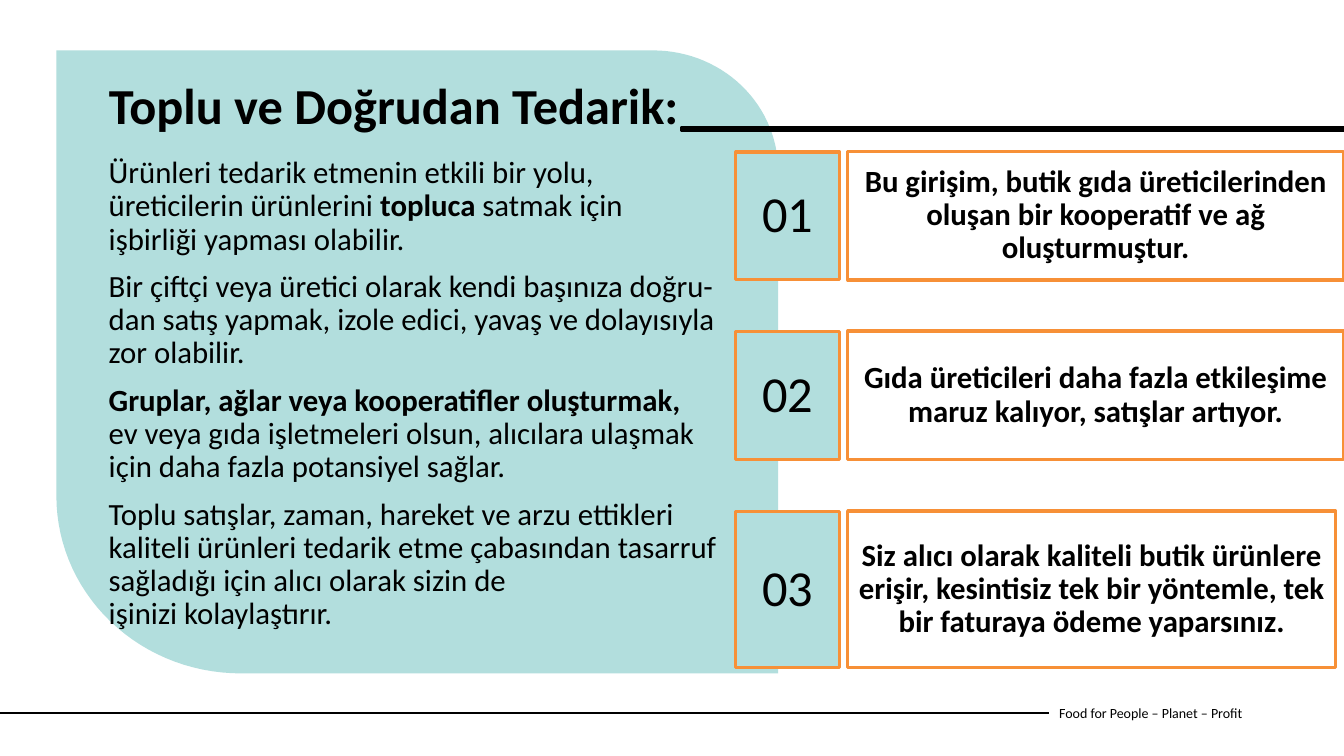
from dataclasses import dataclass
from math import cos, radians, sin

from lxml.etree import SubElement
from pptx import Presentation
from pptx.dml.color import RGBColor
from pptx.enum.shapes import MSO_CONNECTOR, MSO_SHAPE
from pptx.enum.text import MSO_ANCHOR, PP_ALIGN
from pptx.oxml.ns import qn
from pptx.util import Pt

BLACK, MINT, ORANGE = "000000", "B2DEDD", "F79037"
WIDTH, HEIGHT = 960, 540
FIRST_TOP, ROW_STEP = 108, 128.5
BADGE_LEFT, BADGE_WIDTH, BENEFIT_LEFT = 525.6, 74.2, 605.5


@dataclass
class Benefit:
    number: str
    message: str
    width: float
    height: float


@dataclass
class Corner:
    """A quarter ellipse, swept clockwise from a start angle in degrees."""
    x: float
    y: float
    radius_x: float
    radius_y: float
    start: int

    def points(self, steps: int = 30) -> list[tuple[int, int]]:
        angles = [radians(self.start + 90 * i / steps) for i in range(steps + 1)]
        return [(Pt(self.x + self.radius_x * cos(a)),
                 Pt(self.y + self.radius_y * sin(a))) for a in angles]


BENEFITS = [
    Benefit("01", "Bu girişim, butik gıda üreticilerinden oluşan bir kooperatif "
            "ve ağ oluşturmuştur.", 354.2, 92),
    Benefit("02", "Gıda üreticileri daha fazla etkileşime maruz kalıyor, "
            "satışlar artıyor.", 354.2, 92),
    Benefit("03", "Siz alıcı olarak kaliteli butik ürünlere erişir, kesintisiz tek "
            "bir yöntemle, tek bir faturaya ödeme yaparsınız.", 348.5, 112),
]

# Each paragraph is a list of (text, bold) runs.
EXPLANATION = [
    [("Ürünleri tedarik etmenin etkili bir yolu, üreticilerin ürünlerini ", False),
     ("topluca ", True), ("satmak için işbirliği yapması olabilir.", False)],
    [("Bir çiftçi veya üretici olarak kendi başınıza doğru-dan satış yapmak, "
      "izole edici, yavaş ve dolayısıyla zor olabilir.", False)],
    [("Gruplar, ağlar veya kooperatifler oluşturmak,\v", True),
     ("ev veya gıda işletmeleri olsun, alıcılara ulaşmak için daha fazla "
      "potansiyel sağlar.", False)],
    [("Toplu satışlar, zaman, hareket ve arzu ettikleri kaliteli ürünleri tedarik "
      "etme çabasından tasarruf sağladığı için alıcı olarak sizin de\v"
      "işinizi kolaylaştırır.", False)],
]


def color(hex_value: str) -> RGBColor:
    return RGBColor.from_string(hex_value)


def write(shape, paragraphs: list, *, size: float, align=PP_ALIGN.LEFT,
          anchor=MSO_ANCHOR.TOP, line_spacing: float = 0.9) -> None:
    frame = shape.text_frame
    frame.word_wrap = True
    frame.vertical_anchor = anchor
    for index, runs in enumerate(paragraphs):
        paragraph = frame.add_paragraph() if index else frame.paragraphs[0]
        paragraph.alignment = align
        paragraph.line_spacing = line_spacing
        paragraph.space_before = Pt(10 if index else 0)
        for text, bold in runs:
            for position, piece in enumerate(text.split("\v")):
                if position:
                    paragraph.add_line_break()
                if not piece:
                    continue
                run = paragraph.add_run()
                run.text = piece
                run.font.name = "Calibri"
                run.font.size = Pt(size)
                run.font.bold = bold
                run.font.color.rgb = color(BLACK)


def paint(shape, fill: str | None, line: str | None = None, weight: float = 0) -> None:
    shape.shadow.inherit = False
    if fill:
        shape.fill.solid()
        shape.fill.fore_color.rgb = color(fill)
    else:
        shape.fill.background()
    if line:
        shape.line.color.rgb = color(line)
        shape.line.width = Pt(weight)
    else:
        shape.line.fill.background()


def add_box(slide, left: float, top: float, width: float, height: float,
            fill: str | None, line: str, weight: float):
    box = slide.shapes.add_shape(MSO_SHAPE.RECTANGLE, Pt(left), Pt(top),
                                 Pt(width), Pt(height))
    paint(box, fill, line, weight)
    return box


def add_text(slide, left: float, top: float, width: float, height: float,
             paragraphs: list, **text_format) -> None:
    box = slide.shapes.add_textbox(Pt(left), Pt(top), Pt(width), Pt(height))
    write(box, paragraphs, **text_format)


def add_footer(slide) -> None:
    add_text(slide, 749.5, 494.6, 196.6, 28.8,
             [[("Food for People – Planet – Profit", False)]],
             size=10, anchor=MSO_ANCHOR.MIDDLE, line_spacing=1)
    rule = slide.shapes.add_connector(MSO_CONNECTOR.STRAIGHT, Pt(0), Pt(509),
                                      Pt(749.5), Pt(509))
    rule.line.color.rgb = color(BLACK)
    rule.line.width = Pt(1.5)
    SubElement(rule._element.spPr, qn("a:effectLst"))


def add_panel(slide) -> None:
    left, top, right, bottom = 40.3, 36, 555.8, 481
    lower_left = Corner(left + 131.8, bottom - 126.7, 131.8, 126.7, 90)
    upper_right = Corner(right - 89.3, top + 85.7, 89.3, 85.7, 270)
    outline = slide.shapes.build_freeform(Pt(right), Pt(bottom))
    outline.add_line_segments([*lower_left.points(), (Pt(left), Pt(top)),
                               *upper_right.points()], close=True)
    paint(outline.convert_to_shape(), MINT)


def add_benefit(slide, benefit: Benefit, top: float) -> None:
    centred = {"align": PP_ALIGN.CENTER, "anchor": MSO_ANCHOR.MIDDLE}
    badge = add_box(slide, BADGE_LEFT, top + 0.6, BADGE_WIDTH, benefit.height - 0.6,
                    MINT, ORANGE, 2.25)
    write(badge, [[(benefit.number, False)]], size=36, **centred)
    message = add_box(slide, BENEFIT_LEFT, top, benefit.width, benefit.height,
                      None, ORANGE, 2.25)
    write(message, [[(benefit.message, True)]], size=22, **centred)


def main() -> None:
    deck = Presentation()
    deck.slide_width, deck.slide_height = Pt(WIDTH), Pt(HEIGHT)
    slide = deck.slides.add_slide(deck.slide_layouts[6])
    add_footer(slide)
    add_panel(slide)
    add_box(slide, 486.7, 90.7, WIDTH - 486.7, 2.9, BLACK, BLACK, 1.93)
    add_text(slide, 70.6, 108.7, 448.6, 349.9, EXPLANATION, size=22)
    add_text(slide, 70.6, 54, 433.4, 41, [[("Toplu ve Doğrudan Tedarik:", True)]],
             size=36)
    for row, benefit in enumerate(BENEFITS):
        add_benefit(slide, benefit, FIRST_TOP + row * ROW_STEP)
    deck.save("out.pptx")


if __name__ == "__main__":
    main()
